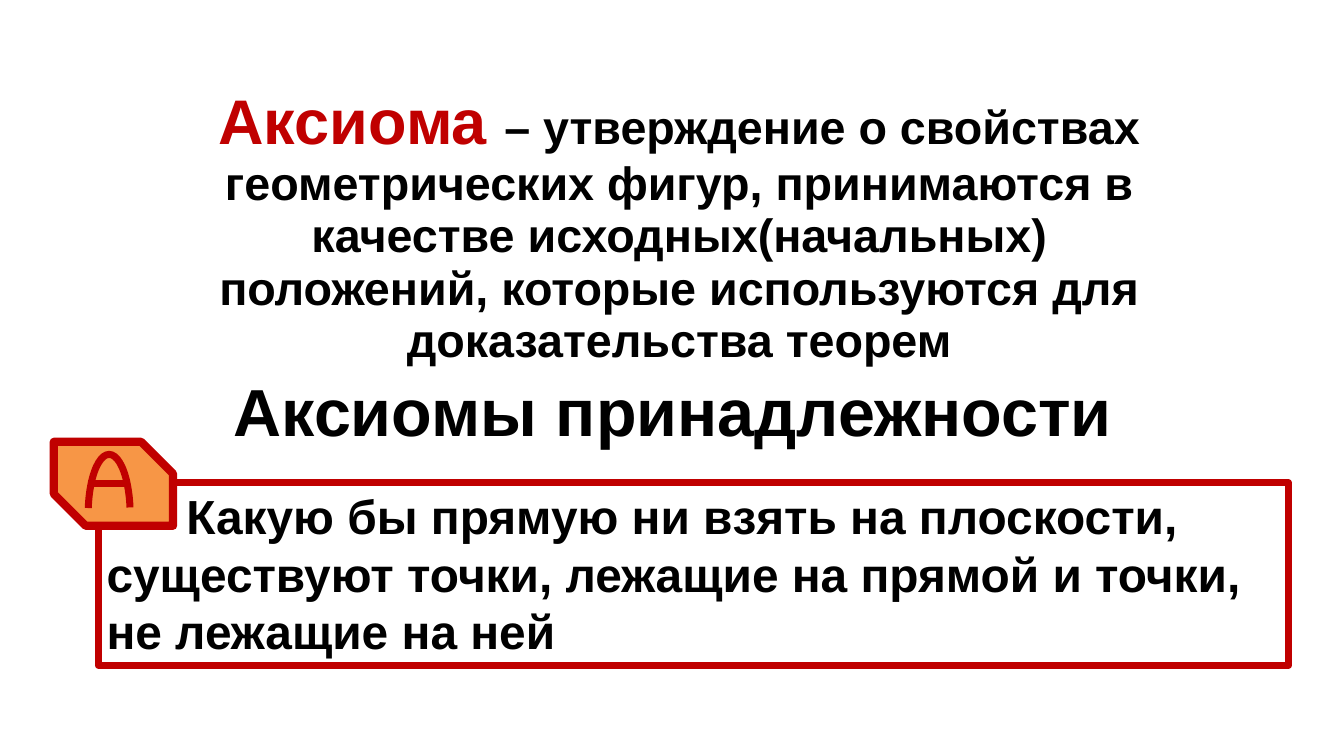
from lxml import etree
from pptx import Presentation
from pptx.dml.color import RGBColor
from pptx.enum import shapes, text
from pptx.oxml import ns
from pptx.util import Inches, Pt

RED = RGBColor(0xC0, 0x00, 0x00)
ORANGE = RGBColor(0xF7, 0x96, 0x46)
BLACK = RGBColor(0x00, 0x00, 0x00)

DEFINITION = [
    "– утверждение о свойствах",
    "геометрических фигур, принимаются в",
    "качестве исходных(начальных)",
    "положений, которые используются для",
    "доказательства теорем",
]
AXIOM = ("Какую бы прямую ни взять на плоскости, существуют точки, "
         "лежащие на прямой и точки, не лежащие на ней")


def set_font(font, size, color=BLACK):
    font.name = "Arial"
    font.size = Pt(size)
    font.bold = True
    font.color.rgb = color


def set_frame(frame, side, edge):
    frame.word_wrap = True
    frame.auto_size = text.MSO_AUTO_SIZE.NONE
    frame.vertical_anchor = text.MSO_ANCHOR.TOP
    frame.margin_left = frame.margin_right = Inches(side)
    frame.margin_top = frame.margin_bottom = Inches(edge)


def set_line(line, width):
    line.color.rgb = RED
    line.width = Pt(width)


def add_outlined(slide, kind, box, width, fill=None, adjustments=()):
    shape = slide.shapes.add_shape(kind, *map(Inches, box))
    shape.shadow.inherit = False
    if fill is None:
        shape.fill.background()
    else:
        shape.fill.solid()
        shape.fill.fore_color.rgb = fill
    set_line(shape.line, width)
    for index, value in enumerate(adjustments):
        shape.adjustments[index] = value
    return shape


def add_heading(slide):
    heading = slide.shapes.title
    heading.left, heading.top, heading.width, heading.height = map(
        Inches, (0.64, 4.34, 14.74, 1.1))
    set_frame(heading.text_frame, 0.14, 0.07)
    paragraph = heading.text_frame.paragraphs[0]
    paragraph.text = "Аксиомы принадлежности"
    paragraph.alignment = text.PP_ALIGN.CENTER
    set_font(paragraph.font, 57)


def add_definition(slide):
    definition = slide.shapes.add_textbox(*map(Inches, (1.42, 1, 13.33, 3.39)))
    frame = definition.text_frame
    set_frame(frame, 0.14, 0.07)
    for index, words in enumerate(DEFINITION):
        paragraph = frame.add_paragraph() if index else frame.paragraphs[0]
        paragraph.alignment = text.PP_ALIGN.CENTER
        paragraph.line_spacing = 0.9
        paragraph.space_before = Pt(1.8)
        set_font(paragraph.font, 40)
        if index == 0:
            term = paragraph.add_run()
            term.text = "Аксиома "
            set_font(term.font, 54, RED)
        paragraph.add_run().text = words


def add_axiom(slide):
    axiom = add_outlined(slide, shapes.MSO_SHAPE.RECTANGLE,
                         (1.17, 5.75, 14.17, 2.17), 6)
    set_frame(axiom.text_frame, 0.1, 0.05)
    paragraph = axiom.text_frame.paragraphs[0]
    paragraph.text = AXIOM
    paragraph.alignment = text.PP_ALIGN.LEFT
    set_font(paragraph.font, 41)
    paragraph._p.get_or_add_pPr().set("indent", str(Inches(0.95)))


def add_badge(slide):
    add_outlined(slide, shapes.MSO_SHAPE.SNIP_2_DIAG_RECTANGLE,
                 (0.64, 5.26, 1.42, 1), 7, ORANGE, (0, 0.38))
    crossbar = slide.shapes.add_connector(
        shapes.MSO_CONNECTOR.STRAIGHT,
        *map(Inches, (1.05, 5.76, 1.54, 5.76)))
    set_line(crossbar.line, 6)
    etree.SubElement(crossbar._element.spPr, ns.qn("a:effectLst"))
    add_outlined(slide, shapes.MSO_SHAPE.ARC, (1.05, 5.41, 0.5, 1.43), 6,
                 adjustments=(118.235, 204.797))


def main():
    deck = Presentation()
    deck.slide_width, deck.slide_height = Inches(16), Inches(9)
    slide = deck.slides.add_slide(deck.slide_layouts[5])
    add_definition(slide)
    add_axiom(slide)
    add_badge(slide)
    add_heading(slide)
    deck.save("out.pptx")


if __name__ == "__main__":
    main()
